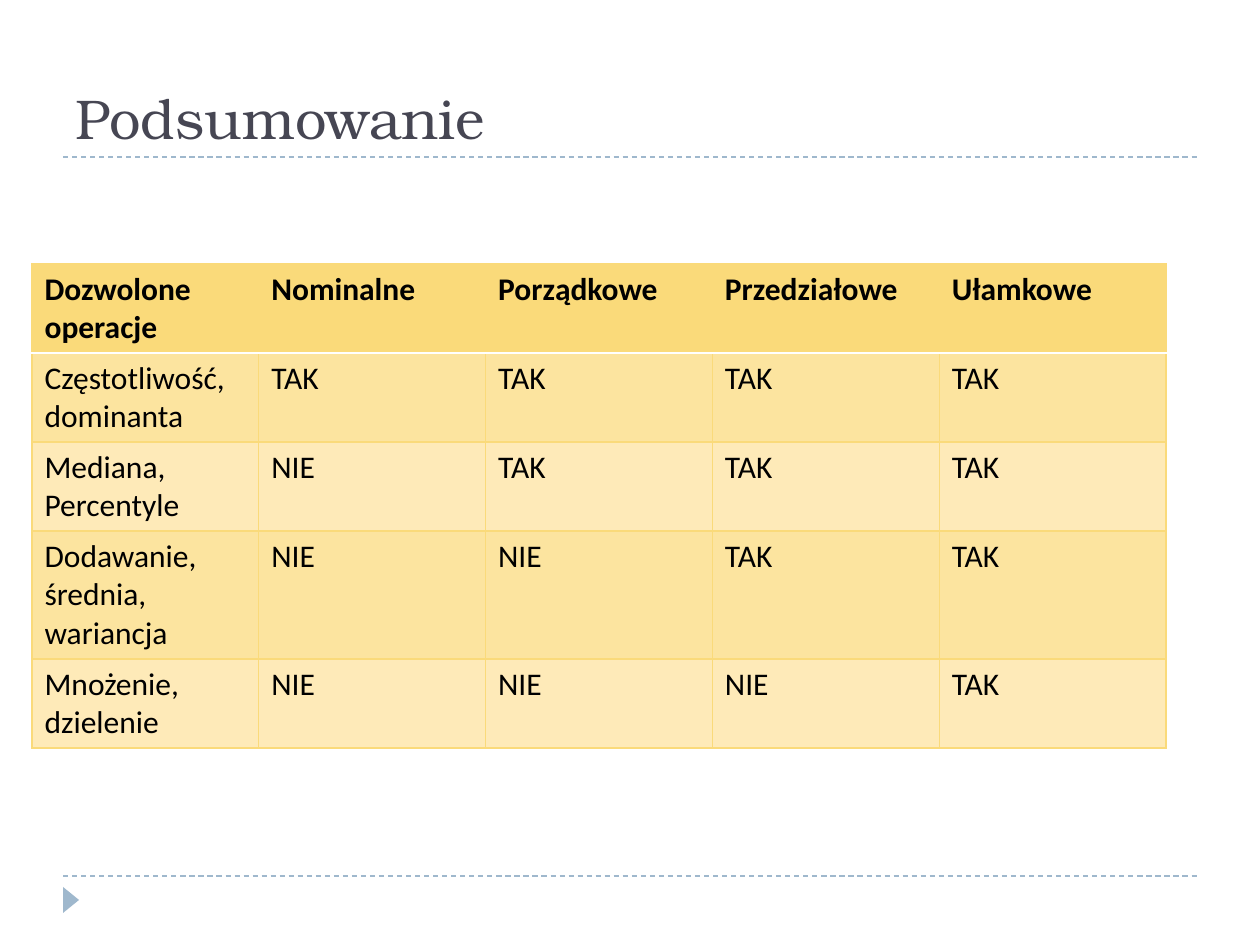
from lxml import etree
from pptx import Presentation
from pptx.dml.color import RGBColor
from pptx.enum.dml import MSO_LINE
from pptx.enum.shapes import MSO_CONNECTOR, MSO_SHAPE
from pptx.enum.text import MSO_ANCHOR
from pptx.oxml.ns import qn
from pptx.util import Emu, Pt

STRAIGHT = MSO_CONNECTOR.STRAIGHT
TRIANGLE = MSO_SHAPE.ISOSCELES_TRIANGLE
DASH = MSO_LINE.DASH
BOTTOM = MSO_ANCHOR.BOTTOM

EMU_PER_PX = 914400 / 126
ACCENT, INK, BLACK, WHITE = "9FB8CD", "464653", "000000", "FFFFFF"
GOLD, DARK_BAND, LIGHT_BAND = "FADA7A", "FCE49F", "FEEAB8"

ROWS = [
    ("Dozwolone operacje", "Nominalne", "Porządkowe", "Przedziałowe", "Ułamkowe"),
    ("Częstotliwość, dominanta", "TAK", "TAK", "TAK", "TAK"),
    ("Mediana, Percentyle", "NIE", "TAK", "TAK", "TAK"),
    ("Dodawanie, średnia, wariancja", "NIE", "NIE", "TAK", "TAK"),
    ("Mnożenie, dzielenie", "NIE", "NIE", "NIE", "TAK"),
]
ROW_HEIGHTS = [89, 89, 89, 128, 89]


def px(length):
    return Emu(round(length * EMU_PER_PX))


def color(value):
    return RGBColor.from_string(value)


def add_span(para, text, font, size, ink, bold=False):
    span = para.add_run()
    span.text = text
    span.font.name = font
    span.font.size = Pt(size)
    span.font.bold = bold
    span.font.color.rgb = color(ink)


def add_rule(page, left, top, width):
    rule = page.shapes.add_connector(
        STRAIGHT, px(left), px(top), px(left + width), px(top))
    rule.line.color.rgb = color(ACCENT)
    rule.line.width = Pt(0.75)
    rule.line.dash_style = DASH
    etree.SubElement(rule._element.spPr, qn("a:effectLst"))


def add_title(page, left, top, width, height):
    box = page.shapes.add_textbox(px(left), px(top), px(width), px(height))
    frame = box.text_frame
    frame.word_wrap = True
    frame.vertical_anchor = BOTTOM
    add_span(frame.paragraphs[0], "Podsumowanie", "TeX Gyre Bonum", 32, INK)
    add_rule(page, left, top + height, width)


def add_footer(page, left, top, width):
    add_rule(page, left, top, width)
    # The marker is turned a quarter so that it points right
    marker = page.shapes.add_shape(
        TRIANGLE, px(left - 5), px(top + 16), px(26), px(16))
    marker.rotation = 90
    marker.shadow.inherit = False
    marker.fill.solid()
    marker.fill.fore_color.rgb = color(ACCENT)
    marker.line.fill.background()


def set_border(cell, side, ink, width):
    border = etree.SubElement(
        cell._tc.get_or_add_tcPr(), qn(f"a:ln{side}"), w=str(Pt(width)))
    fill = etree.SubElement(border, qn("a:solidFill"))
    etree.SubElement(fill, qn("a:srgbClr"), val=ink)


def style_cell(cell, row):
    # Borders go before the fill; a white line parts header and body
    gold, white = (GOLD, 0.75), (WHITE, 1.5)
    set_border(cell, "L", *gold)
    set_border(cell, "R", *gold)
    set_border(cell, "T", *(white if row == 1 else gold))
    set_border(cell, "B", *(white if row == 0 else gold))
    cell.fill.solid()
    band = DARK_BAND if row % 2 else LIGHT_BAND
    cell.fill.fore_color.rgb = color(band if row else GOLD)


def add_operations_table(page, left, top, width):
    columns = len(ROWS[0])
    table = page.shapes.add_table(
        len(ROWS), columns, px(left), px(top), px(width),
        px(sum(ROW_HEIGHTS))).table
    table.first_row = False
    table.horz_banding = False
    for column in table.columns:
        column.width = px(width / columns)
    for row, texts in enumerate(ROWS):
        table.rows[row].height = px(ROW_HEIGHTS[row])
        for column, text in enumerate(texts):
            cell = table.cell(row, column)
            style_cell(cell, row)
            add_span(cell.text_frame.paragraphs[0], text, "Calibri", 18,
                     BLACK, bold=row == 0)


def main():
    deck = Presentation()
    deck.slide_width, deck.slide_height = px(1260), px(945)
    page = deck.slides.add_slide(deck.slide_layouts[6])
    add_footer(page, 63, 876, 1134)
    add_title(page, 63, 21, 1134, 136)
    add_operations_table(page, 32, 264, 1134)
    deck.save("out.pptx")


if __name__ == "__main__":
    main()
